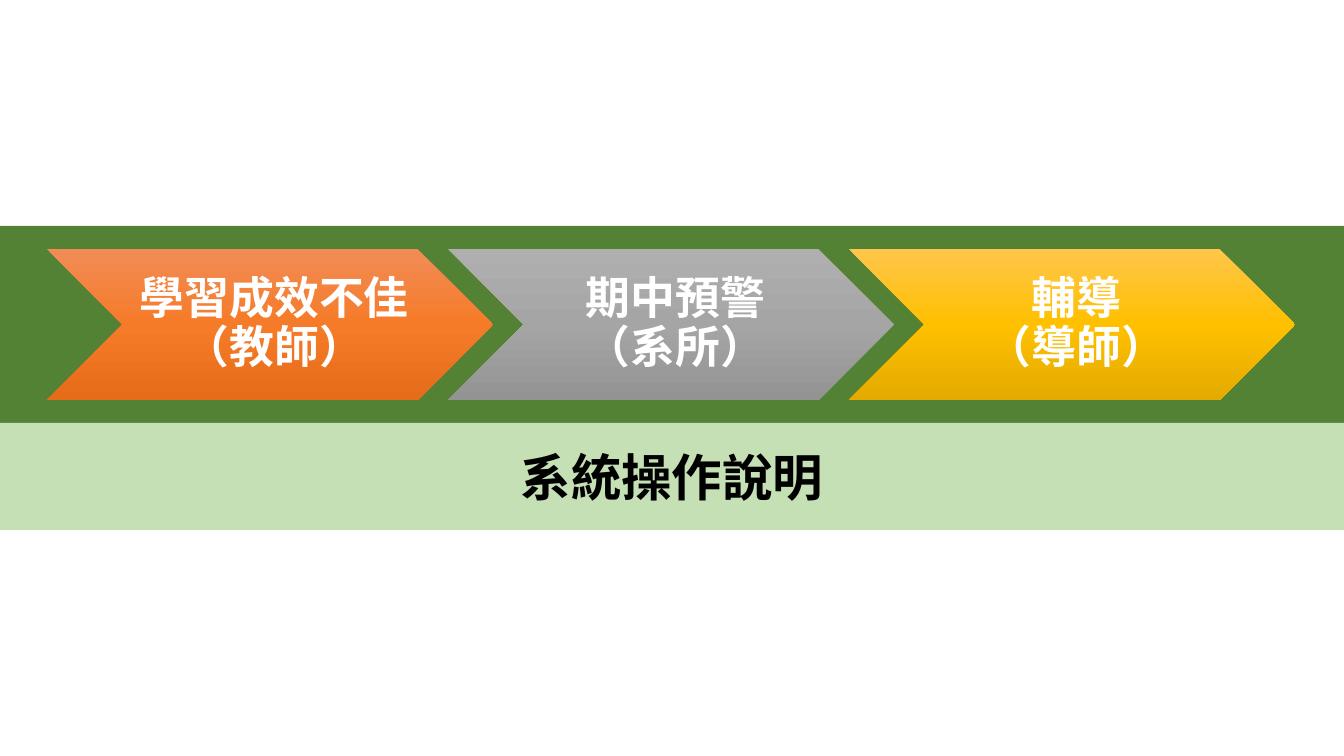
import copy

import pptx
import pptx.dml.color
import pptx.enum.lang
import pptx.enum.shapes
import pptx.enum.text
import pptx.oxml.ns
import pptx.util
import lxml.etree

RGB = pptx.dml.color.RGBColor
SHAPE = pptx.enum.shapes.MSO_SHAPE
FONT = "Noto Sans CJK SC"
PX_PER_INCH = 100.8
WIDTH, HEIGHT = 1344, 756

DARK_GREEN = RGB(0x54, 0x82, 0x35)
LIGHT_GREEN = RGB(0xC5, 0xE0, 0xB4)
BLACK = RGB(0, 0, 0)
WHITE = RGB(0xFF, 0xFF, 0xFF)
ORANGES = RGB(0xF1, 0x8C, 0x57), RGB(0xF6, 0x7B, 0x28), RGB(0xE5, 0x6C, 0x19)
GREYS = RGB(0xAF, 0xAF, 0xAF), RGB(0xA5, 0xA5, 0xA5), RGB(0x93, 0x93, 0x93)
GOLDS = RGB(0xFF, 0xC6, 0x4B), RGB(0xFF, 0xC0, 0x00), RGB(0xE3, 0xAB, 0x00)

STEPS = [
    ("學習成效不佳", "（教師）", ORANGES),
    ("期中預警", "（系所）", GREYS),
    ("輔導", "（導師）", GOLDS),
]
STEP_LEFT, STEP_TOP, STEP_WIDTH, STEP_HEIGHT = 47, 249, 446, 151
STEP_PITCH = 401


def px(n):
    return pptx.util.Emu(round(n * 914400 / PX_PER_INCH))


def add_run(p, text, size, color):
    r = p.add_run()
    r.text = text
    r.font.size = pptx.util.Pt(size)
    r.font.bold = True
    r.font.name = FONT
    r.font.color.rgb = color
    r.font.language_id = pptx.enum.lang.MSO_LANGUAGE_ID.TRADITIONAL_CHINESE
    latin = r.font._element.find(pptx.oxml.ns.qn("a:latin"))
    ea = lxml.etree.Element(pptx.oxml.ns.qn("a:ea"), typeface=FONT)
    latin.addnext(ea)


def add_plain_shape(s, kind, left, top, width, height):
    sp = s.shapes.add_shape(kind, px(left), px(top), px(width), px(height))
    sp.shadow.inherit = False
    sp.line.fill.background()
    return sp


def add_band(s, top, height, color):
    sp = add_plain_shape(s, SHAPE.RECTANGLE, 0, top, WIDTH, height)
    sp.fill.solid()
    sp.fill.fore_color.rgb = color


def fill_gradient(sp, colors):
    sp.fill.gradient()
    sp.fill.gradient_angle = 270
    stops = sp.element.spPr.find(".//" + pptx.oxml.ns.qn("a:gsLst"))
    stops.append(copy.deepcopy(stops[-1]))
    for i, (stop, color) in enumerate(zip(sp.fill.gradient_stops, colors)):
        stop.position = i / 2
        stop.color.rgb = color


def add_step(s, left, task, role, colors):
    sp = add_plain_shape(s, SHAPE.CHEVRON, left, STEP_TOP, STEP_WIDTH, STEP_HEIGHT)
    fill_gradient(sp, colors)
    tf = sp.text_frame
    tf.word_wrap = True
    tf.vertical_anchor = pptx.enum.text.MSO_ANCHOR.MIDDLE
    tf.margin_left = px(14)
    tf.margin_right = tf.margin_top = tf.margin_bottom = px(5)
    p = tf.paragraphs[0]
    p.alignment = pptx.enum.text.PP_ALIGN.CENTER
    p.line_spacing = 0.9
    add_run(p, task, 32, WHITE)
    p.add_line_break()
    add_run(p, role, 32, WHITE)


def place_title(s, text):
    sp = s.shapes.title
    s.shapes.element.append(sp.element)
    sp.left, sp.top, sp.width, sp.height = px(509), px(441), px(326), px(72)
    tf = sp.text_frame
    tf.word_wrap = False
    tf.vertical_anchor = pptx.enum.text.MSO_ANCHOR.TOP
    p = tf.paragraphs[0]
    p.alignment = pptx.enum.text.PP_ALIGN.CENTER
    p.line_spacing = 1.0
    p.space_before = pptx.util.Pt(0)
    add_run(p, text, 36, BLACK)


def main():
    prs = pptx.Presentation()
    prs.slide_width, prs.slide_height = px(WIDTH), px(HEIGHT)
    s = prs.slides.add_slide(prs.slide_layouts.get_by_name("Title Only"))
    add_band(s, 226, 197, DARK_GREEN)
    add_band(s, 423, 107, LIGHT_GREEN)
    place_title(s, "系統操作說明")
    for i, (task, role, colors) in enumerate(STEPS):
        add_step(s, STEP_LEFT + i * STEP_PITCH, task, role, colors)
    prs.save("out.pptx")


if __name__ == "__main__":
    main()
